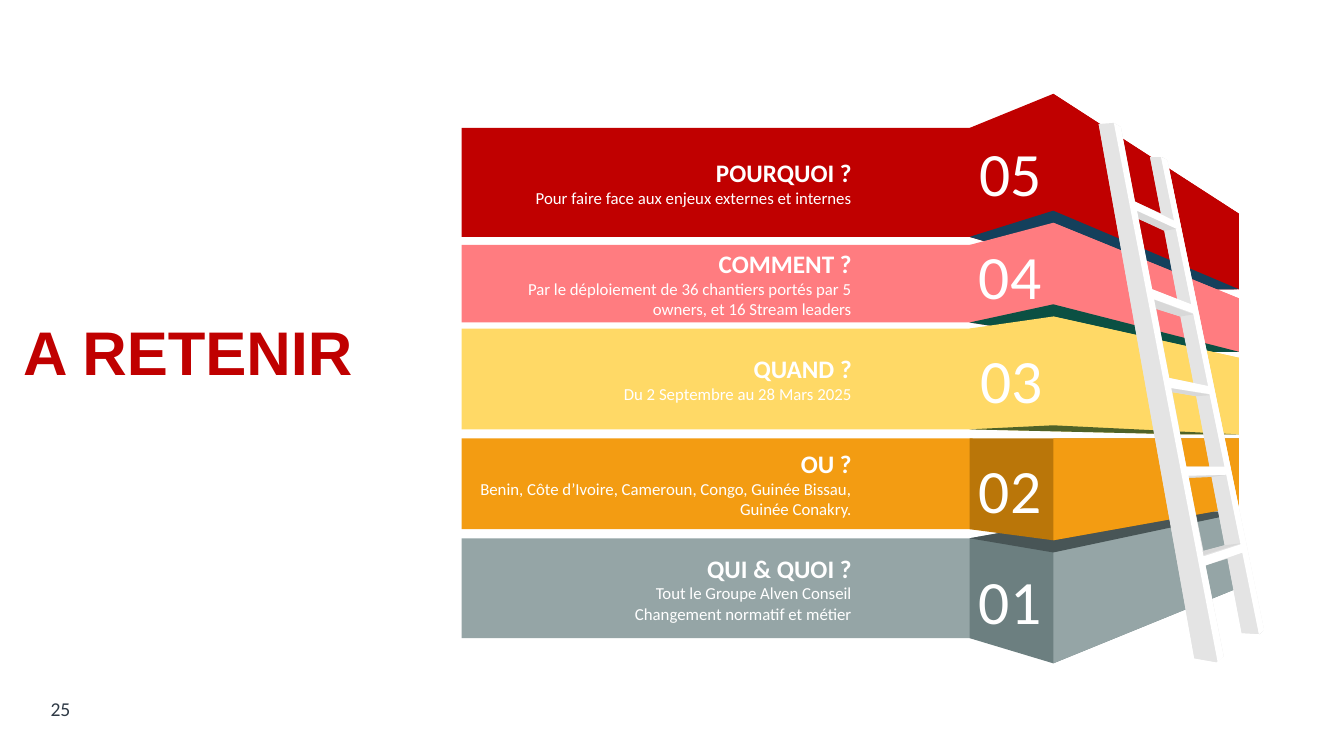
import pptx
import pptx.util
import pptx.dml.color
import pptx.enum.shapes
import pptx.enum.text

Pt = pptx.util.Pt
RGBColor = pptx.dml.color.RGBColor
Align = pptx.enum.text.PP_ALIGN
Anchor = pptx.enum.text.MSO_ANCHOR

WHITE = RGBColor(0xFF, 0xFF, 0xFF)
INK = RGBColor(0x2F, 0x3A, 0x46)
RED = RGBColor(0xC0, 0x00, 0x00)
PINK = RGBColor(0xFF, 0x7C, 0x80)
YELLOW = RGBColor(0xFF, 0xD9, 0x66)
ORANGE = RGBColor(0xF3, 0x9C, 0x12)
GRAY = RGBColor(0x95, 0xA5, 0xA6)
DARK_ORANGE = RGBColor(0xBA, 0x76, 0x09)
SLATE = RGBColor(0x6C, 0x7F, 0x80)
DARK_SLATE = RGBColor(0x48, 0x55, 0x56)
NAVY = RGBColor(0x14, 0x40, 0x5C)
DARK_GREEN = RGBColor(0x0B, 0x50, 0x43)
OLIVE = RGBColor(0x4F, 0x62, 0x28)
RAIL = RGBColor(0xE4, 0xE4, 0xE4)
TREAD = RGBColor(0xD8, 0xD8, 0xD8)

BAND_LEFT, BAND_WIDTH = 329.8, 365
LEFT, EDGE, RIGHT = 692.6, 752.4, 884.9
NUMBER_SIZE = 85

BANDS = [
    ("01", 384.5, 71.3, GRAY, "QUI & QUOI ?",
     ["Tout le Groupe Alven Conseil", "Changement normatif et métier"], 679, 385.9),
    ("05", 91.4, 77.8, RED, "POURQUOI ?",
     ["Pour faire face aux enjeux externes et internes"], 679.7, 79.9),
    ("04", 175, 55.4, PINK, "COMMENT ?",
     ["Par le déploiement de 36 chantiers portés par 5 owners, et 16 Stream leaders"], 679, 154.1),
    ("03", 234.7, 72, YELLOW, "QUAND ?",
     ["Du 2 Septembre au 28 Mars 2025"], 680.4, 228.2),
    ("02", 313.2, 64.8, ORANGE, "OU ?",
     ["Benin, Côte d’Ivoire, Cameroun, Congo, Guinée Bissau, Guinée Conakry."], 679, 306.7),
]

FOLDED_FACES = [
    (SLATE, [(817.9, 362.2), (RIGHT, 366.5), (RIGHT, 419.8), (EDGE, 473.8), (LEFT, 455.8), (LEFT, 384.5)]),
    (GRAY, [(RIGHT, 419.8), (EDGE, 473.8), (EDGE, 393.8), (RIGHT, 366.5)]),
    (DARK_SLATE, [(LEFT, 384.5), (817.9, 362.2), (RIGHT, 366.5), (EDGE, 394.6)]),
    (RED, [(EDGE, 67), (RIGHT, 152.6), (RIGHT, 206.6), (823.7, 207.4), (LEFT, 169.2), (LEFT, 91.4)]),
    (RED, [(EDGE, 67), (RIGHT, 152.6), (RIGHT, 206.6), (EDGE, 150.5)]),
    (NAVY, [(LEFT, 169.2), (823.7, 207.4), (RIGHT, 206.6), (EDGE, 150.5)]),
    (PINK, [(EDGE, 159.1), (RIGHT, 213.1), (RIGHT, 251.3), (825.1, 251.3), (LEFT, 230.4), (LEFT, 175)]),
    (PINK, [(EDGE, 218.2), (RIGHT, 251.3), (RIGHT, 213.1), (EDGE, 159.1)]),
    (DARK_GREEN, [(LEFT, 230.4), (825.8, 251.3), (RIGHT, 251.3), (EDGE, 217.4)]),
    (YELLOW, [(EDGE, 226.1), (RIGHT, 255.6), (RIGHT, 310.3), (846, 310.3), (LEFT, 306.7), (LEFT, 234.7)]),
    (YELLOW, [(RIGHT, 310.3), (EDGE, 305.3), (EDGE, 226.1), (RIGHT, 255.6)]),
    (OLIVE, [(LEFT, 306.7), (846, 310.3), (RIGHT, 310.3), (EDGE, 303.8)]),
    (DARK_ORANGE, [(LEFT, 313.2), (RIGHT, 313.2), (RIGHT, 362.2), (EDGE, 385.9), (LEFT, 378)]),
    (ORANGE, [(RIGHT, 362.2), (EDGE, 385.9), (EDGE, 313.2), (RIGHT, 313.2)]),
]

LADDER_BACK = [
    [(784.8, 88.6), (795.6, 87.8), (800.6, 90.7), (810.7, 144), (829.4, 152.6), (821.5, 112.3),
     (830.2, 112.3), (833.8, 114.5), (902.9, 450), (900, 452.9), (887, 452.2), (877, 398.9),
     (861.1, 403.9), (874.1, 468.7), (869, 473), (853.2, 470.2)],
    [(865.4, 340.6), (848.9, 341.3), (859.7, 393.8), (874.8, 389.5)],
    [(837.4, 280.1), (847.4, 333.4), (864, 333.4), (854.6, 283)],
    [(825.8, 220.3), (835.2, 270), (852.5, 273.6), (843.1, 226.1)],
    [(812.9, 156.2), (823, 206.6), (841, 213.8), (831.6, 164.2)],
]
LADDER_FRONT = [
    [(795.6, 87.8), (800.6, 90.7), (810.7, 144), (838.8, 157.7), (829.4, 112.3), (833.8, 114.5),
     (902.9, 450), (899.3, 452.9), (887.8, 394.6), (861.1, 403.9), (874.1, 468.7), (869.8, 473)],
    [(876.2, 339.1), (848.9, 339.8), (859.7, 397.4), (886.3, 388.8)],
    [(836.6, 277.2), (847.4, 333.4), (874.8, 333.4), (864, 281.5)],
    [(824.4, 213.8), (835.2, 270), (863.3, 275.8), (852.5, 223.9)],
    [(812.2, 150.5), (823, 206.6), (851, 217.4), (840.2, 163.4)],
]
RAILS = [
    (RAIL, [(784.8, 88.6), (794.9, 88.6), (869, 473), (853.2, 470.2)]),
    (RAIL, [(821.5, 112.3), (830.2, 112.3), (900, 452.9), (887, 452.2)]),
    (WHITE, [(829.4, 112.3), (833.8, 114.5), (902.9, 450), (899.3, 452.9)]),
]
TREADS = [
    [(841, 163.4), (831.6, 164.9), (812.9, 156.2), (811.4, 150.5)],
    [(852.5, 224.6), (843.1, 226.1), (824.4, 220.3), (823.7, 213.8)],
    [(865.4, 282.2), (854.6, 283), (837.4, 280.1), (836.6, 277.2)],
    [(877, 339.1), (866.2, 340.6), (848.9, 341.3), (848.9, 340.6)],
    [(886.3, 388.1), (874.8, 389.5), (858.2, 393.8), (859, 396.7)],
]


def paint(shape, color):
    shape.shadow.inherit = False
    shape.fill.solid()
    shape.fill.fore_color.rgb = color
    shape.line.fill.background()


def add_outline(slide, color, contours):
    contours = [[(Pt(x), Pt(y)) for x, y in contour] for contour in contours]
    builder = slide.shapes.build_freeform(*contours[0][0])
    builder.add_line_segments(contours[0][1:], close=True)
    for contour in contours[1:]:
        builder.move_to(*contour[0])
        builder.add_line_segments(contour[1:], close=True)
    paint(builder.convert_to_shape(), color)


def style(paragraph, size, color, align, bold=False, font="Calibri"):
    paragraph.alignment = align
    for run in paragraph.runs:
        run.font.name = font
        run.font.size = Pt(size)
        run.font.bold = bold
        run.font.color.rgb = color


def add_label(slide, box, text, size, color, align=Align.CENTER, anchor=Anchor.MIDDLE, **look):
    frame = slide.shapes.add_textbox(*map(Pt, box)).text_frame
    frame.word_wrap = True
    frame.vertical_anchor = anchor
    frame.text = text
    style(frame.paragraphs[0], size, color, align, **look)


def add_band(slide, top, height, color, title, lines):
    band = slide.shapes.add_shape(pptx.enum.shapes.MSO_SHAPE.RECTANGLE,
                                  Pt(BAND_LEFT), Pt(top), Pt(BAND_WIDTH), Pt(height))
    paint(band, color)
    frame = band.text_frame
    frame.word_wrap = True
    frame.vertical_anchor = Anchor.MIDDLE
    frame.margin_left, frame.margin_right = Pt(7.2), Pt(86.4)
    frame.margin_top = frame.margin_bottom = Pt(3)
    frame.text = "\n".join([title] + lines)
    for index, paragraph in enumerate(frame.paragraphs):
        style(paragraph, 12 if index else 18, WHITE, Align.RIGHT, bold=index == 0)


def main():
    presentation = pptx.Presentation()
    presentation.slide_width, presentation.slide_height = Pt(960), Pt(540)
    slide = presentation.slides.add_slide(presentation.slide_layouts[6])

    add_label(slide, (25.9, 491, 34.6, 31), "25", 14, INK)
    for number, top, height, color, title, lines, number_left, number_top in BANDS:
        add_band(slide, top, height, color, title, lines)
    for color, points in FOLDED_FACES:
        add_outline(slide, color, [points])

    add_outline(slide, RAIL, LADDER_BACK)
    for color, points in RAILS:
        add_outline(slide, color, [points])
    for points in TREADS:
        add_outline(slide, TREAD, [points])
    add_outline(slide, WHITE, LADDER_FRONT)

    for number, top, height, color, title, lines, number_left, number_top in BANDS:
        add_label(slide, (number_left, number_top, NUMBER_SIZE, NUMBER_SIZE), number, 44, WHITE)
    add_label(slide, (9.4, 221, 283.7, 60.5), "A RETENIR", 44, RED,
              align=Align.LEFT, anchor=Anchor.TOP, bold=True, font="Arial")
    presentation.save("out.pptx")


if __name__ == "__main__":
    main()
